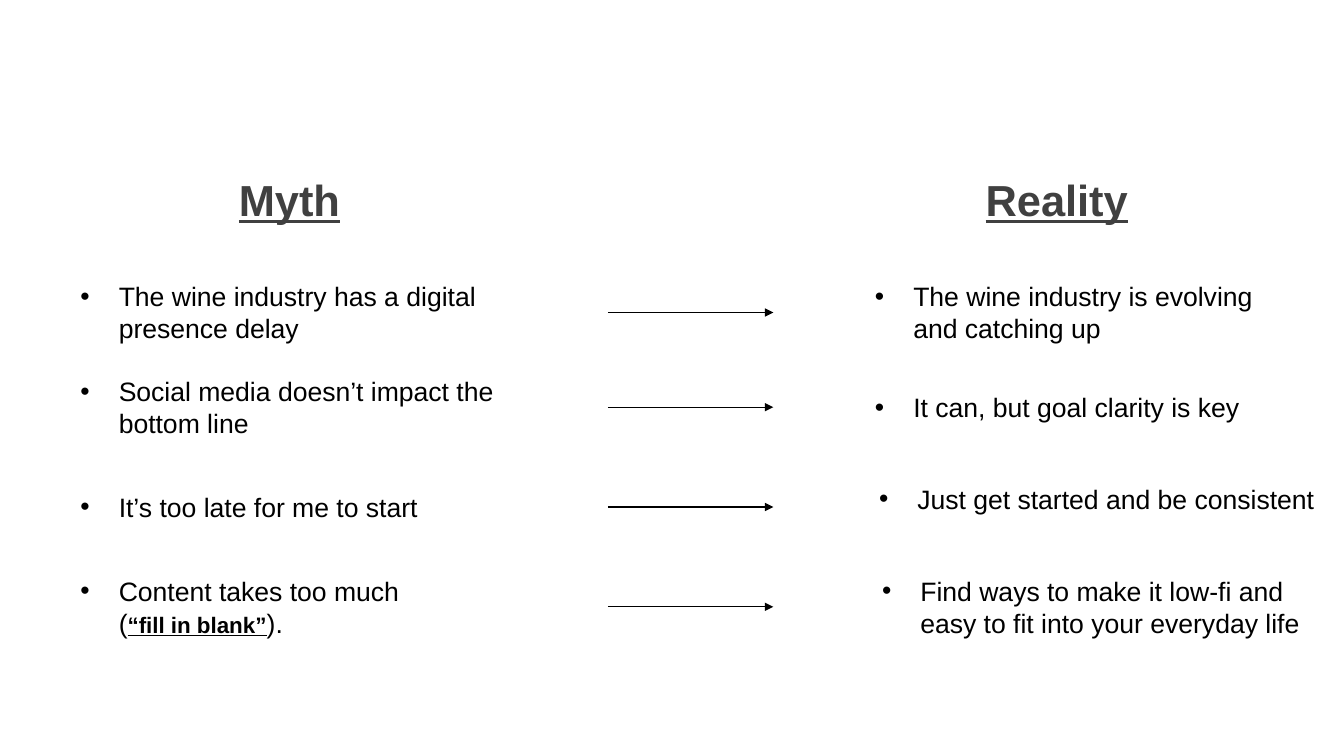
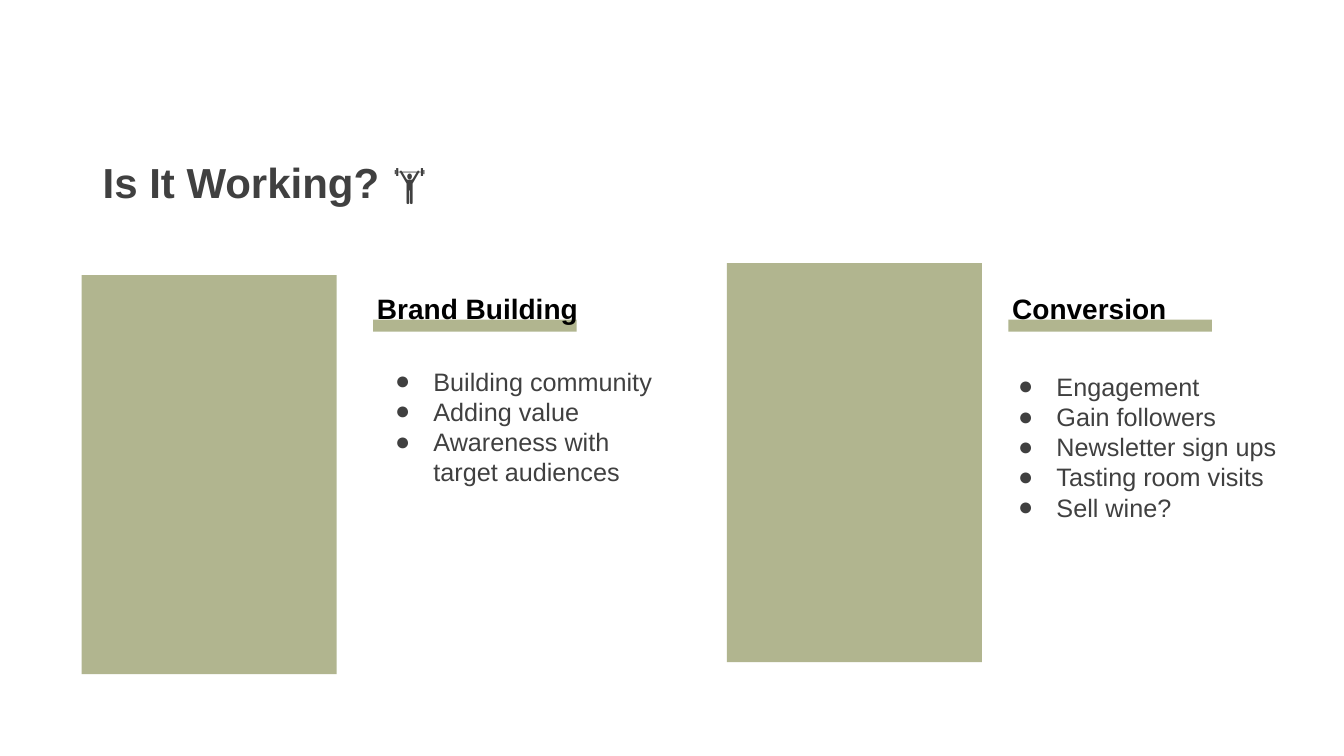
from dataclasses import dataclass

from lxml import etree
from pptx import Presentation
from pptx.dml.color import RGBColor
from pptx.enum import shapes, text
from pptx.oxml import ns
from pptx.util import Inches, Pt


@dataclass(frozen=True)
class Theme:
    font: str = "Arial"
    heading: RGBColor = RGBColor(0x40, 0x40, 0x40)
    ink: RGBColor = RGBColor(0, 0, 0)
    olive: RGBColor = RGBColor(0x9E, 0xA3, 0x74)
    olive_alpha: int = 80
    column_size: float = 31
    title_size: float = 30
    label_size: float = 20
    pair_size: float = 19
    list_size: float = 18
    blank_size: float = 16


THEME = Theme()

# Each pair: arrow y, (myth, top), (reality, left, top, width)
PAIRS = [
    (3.1, ("The wine industry has a digital presence delay", 2.68),
     ("The wine industry is evolving and catching up", 8.46, 2.68, 4.5)),
    (4.04, ("Social media doesn’t impact the bottom line", 3.62),
     ("It can, but goal clarity is key", 8.46, 3.78, 4.87)),
    (5.03, ("It’s too late for me to start", 4.77),
     ("Just get started and be consistent", 8.5, 4.69, 4.65)),
    (6.02, ("Content takes too much\v(|“fill in blank”|).", 5.6),
     ("Find ways to make it low-fi and easy to fit into your everyday life",
      8.53, 5.6, 4.74)),
]

# Each goal: panel left, panel top, label, label left, list left, list top, items
GOALS = [
    (0.81, 2.73, "Brand Building", 3.64, 3.7, 3.53,
     ["Building community", "Adding value", "Awareness with target audiences"]),
    (7.21, 2.61, "Conversion", 9.94, 9.88, 3.58,
     ["Engagement", "Gain followers", "Newsletter sign ups",
      "Tasting room visits", "Sell wine?"]),
]


def add_xml(parent, tag, **attributes):
    return etree.SubElement(parent, ns.qn(tag), **attributes)


def style_run(span, size, color, bold=False, underline=False):
    span.font.name = THEME.font
    span.font.size = Pt(size)
    span.font.color.rgb = color
    span.font.bold = bold
    span.font.underline = underline


def add_bullet(para, mark):
    properties = para._p.get_or_add_pPr()
    properties.set("marL", str(Inches(0.5)))
    properties.set("indent", str(Inches(-0.38)))
    add_xml(properties, "a:buFont", typeface=THEME.font)
    add_xml(properties, "a:buChar", char=mark)


def add_text(page, left, top, width, height, lines, size, color, bold=False,
             underline=False, bullet=None, align=text.PP_ALIGN.LEFT):
    """Add a text box with one paragraph per line and return its frame."""
    box = page.shapes.add_textbox(*map(Inches, (left, top, width, height)))
    frame = box.text_frame
    frame.word_wrap = True
    frame.margin_left = frame.margin_right = Inches(0.1)
    frame.margin_top = frame.margin_bottom = Inches(0.1)
    frame.text = "\n".join(lines)
    for para in frame.paragraphs:
        para.alignment = align
        if bullet:
            add_bullet(para, bullet)
        for span in para.runs:
            style_run(span, size, color, bold, underline)
    return frame


def add_block(page, left, top, width, height):
    """Add a translucent olive rectangle."""
    block = page.shapes.add_shape(shapes.MSO_SHAPE.RECTANGLE,
                                  *map(Inches, (left, top, width, height)))
    block.shadow.inherit = False
    block.fill.solid()
    block.fill.fore_color.rgb = THEME.olive
    block.line.fill.background()
    color = block._element.spPr.find(".//" + ns.qn("a:srgbClr"))
    add_xml(color, "a:alpha", val=str(THEME.olive_alpha * 1000))


def add_arrow(page, left, right, y):
    arrow = page.shapes.add_connector(
        shapes.MSO_CONNECTOR.STRAIGHT, *map(Inches, (left, y, right, y)))
    arrow.line.color.rgb = THEME.ink
    arrow.line.width = Pt(0.75)
    add_xml(arrow.line._get_or_add_ln(), "a:tailEnd", type="triangle")
    add_xml(arrow._element.spPr, "a:effectLst")


def add_point(page, left, top, width, words):
    """Add one bulleted statement; words between bars are emphasised."""
    plain, *marked = words.split("|")
    frame = add_text(page, left, top, width, 0.84, [plain], THEME.pair_size,
                     THEME.ink, bullet="•")
    for index, part in enumerate(marked):
        span = frame.paragraphs[0].add_run()
        span.text = part
        strong = index % 2 == 0
        style_run(span, THEME.blank_size if strong else THEME.pair_size,
                  THEME.ink, strong, strong)


def build_myths(page):
    # Column headings
    for left, name in ((1.08, "Myth"), (8.69, "Reality")):
        add_text(page, left, 1.62, 3.58, 0.72, [name], THEME.column_size,
                 THEME.heading, bold=True, underline=True,
                 align=text.PP_ALIGN.CENTER)
    # Statements joined by arrows
    for y, (myth, myth_top), (reality, left, top, width) in PAIRS:
        add_point(page, 0.58, myth_top, 4.5, myth)
        add_arrow(page, 6.03, 7.67, y)
        add_point(page, left, top, width, reality)


def build_goals(page):
    add_text(page, 0.92, 1.45, 7.93, 0.71, ["Is It Working? 🏋️"],
             THEME.title_size, THEME.heading, bold=True)
    for panel_left, panel_top, label, left, list_left, list_top, items in GOALS:
        # Panel, underlined label and list
        add_block(page, panel_left, panel_top, 2.53, 3.96)
        add_block(page, left + 0.06, 3.17, 2.02, 0.12)
        add_text(page, left, 2.79, 3.28, 0.54, [label], THEME.label_size,
                 THEME.ink, bold=True)
        add_text(page, list_left, list_top, 3.05, 1.72, items,
                 THEME.list_size, THEME.heading, bullet="●")


def main():
    deck = Presentation()
    deck.slide_width, deck.slide_height = Inches(13.33), Inches(7.5)
    for build in (build_myths, build_goals):
        build(deck.slides.add_slide(deck.slide_layouts[6]))
    deck.save("out.pptx")


if __name__ == "__main__":
    main()
